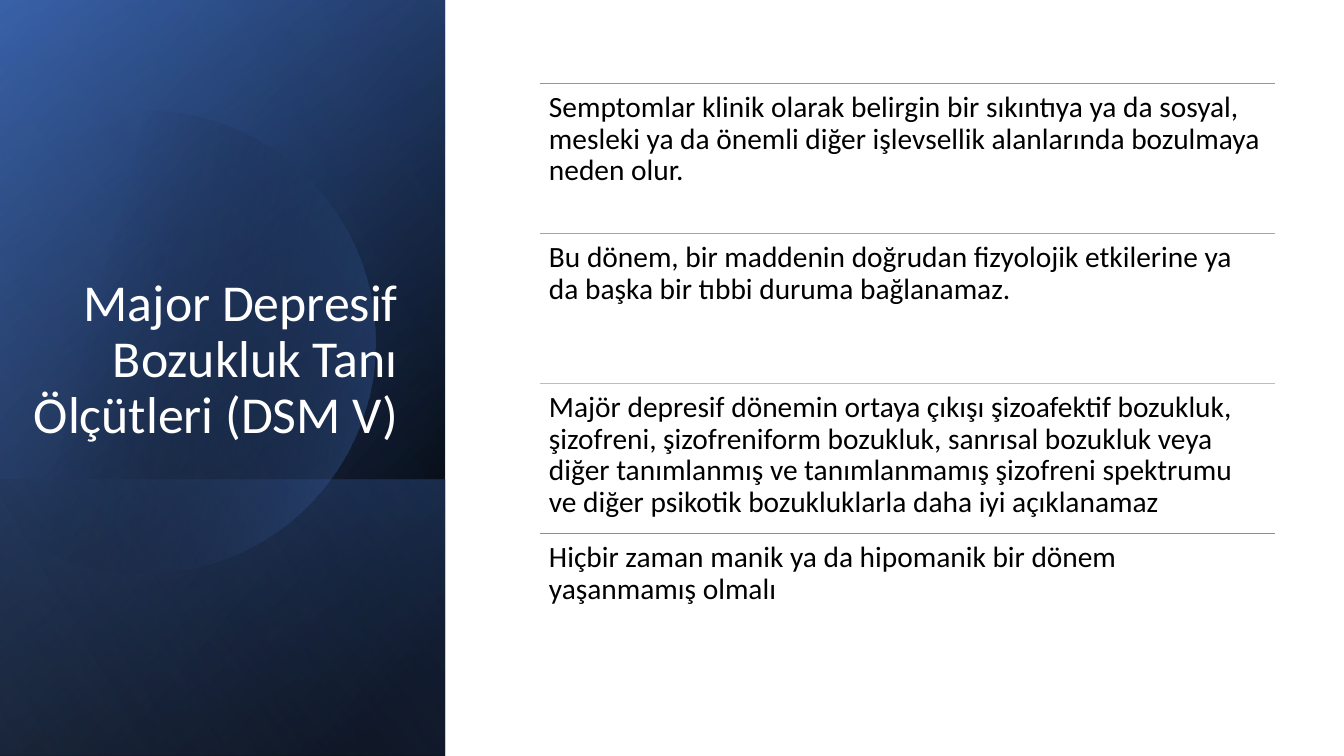
import math

from lxml import etree
from pptx import Presentation
from pptx import util as u
from pptx.dml.color import RGBColor
from pptx.enum import shapes, text
from pptx.oxml.ns import qn

SCALE = 914400 / 100.8


def px(n):
    return u.Emu(round(n * SCALE))


def rgb(code):
    return RGBColor.from_string(code)


class Deck:
    font = "Calibri"

    def __init__(self, wide, high):
        self.prs = Presentation()
        self.prs.slide_width, self.prs.slide_height = px(wide), px(high)
        self.slide = self.prs.slides.add_slide(self.prs.slide_layouts[5])
        self.items = self.slide.shapes

    def shade(self, shape, stops, angle):
        """Fill with two (position, colour, opacity) stops, in percent."""
        shape.shadow.inherit = False
        shape.line.fill.background()
        shape.fill.gradient()
        shape.fill.gradient_angle = 360 - angle
        for stop, (place, color, _) in zip(shape.fill.gradient_stops, stops):
            stop.position = place / 100
            stop.color.rgb = rgb(color)
        marks = shape._element.spPr.iter(qn("a:srgbClr"))
        for mark, (_, _, solid) in zip(list(marks), stops):
            if solid < 100:
                etree.SubElement(mark, qn("a:alpha"), val=str(solid * 1000))

    def panel(self, top, wide, high, stops, angle):
        """Add a mirrored quarter-turned rectangle that shows wide by high."""
        left, drop = (wide - high) / 2, top + (high - wide) / 2
        rect = self.items.add_shape(
            shapes.MSO_SHAPE.RECTANGLE, px(left), px(drop), px(high), px(wide))
        rect.rotation = 90
        rect._element.spPr.find(qn("a:xfrm")).set("flipH", "1")
        self.shade(rect, stops, angle)

    def disc(self, x, y, radius, stops, angle):
        """Add a circle cut off at the left edge of the slide."""
        reach, steps = math.acos(-x / radius), 90
        turns = [reach * (2 * i / steps - 1) for i in range(steps + 1)]
        dots = [(px(x + radius * math.cos(t)), px(y + radius * math.sin(t)))
                for t in turns]
        form = self.items.build_freeform(*dots[0], scale=1.0)
        form.add_line_segments(dots[1:], close=True)
        self.shade(form.convert_to_shape(), stops, angle)

    def label(self, shape, words, size, color, align, anchor):
        """Put styled words into a shape and return its text frame."""
        frame = shape.text_frame
        frame.text = words
        frame.word_wrap = True
        frame.auto_size = text.MSO_AUTO_SIZE.NONE
        frame.vertical_anchor = anchor
        para = frame.paragraphs[0]
        para.alignment = align
        para.line_spacing = 0.9
        font = para.runs[0].font
        font.name, font.size = self.font, u.Pt(size)
        font.color.rgb = rgb(color)
        return frame

    def title(self, words, left, top, wide, high):
        head = self.items.title
        head.left, head.top = px(left), px(top)
        head.width, head.height = px(wide), px(high)
        self.label(head, words, 37, "FFFFFF",
                   text.PP_ALIGN.RIGHT, text.MSO_ANCHOR.BOTTOM)
        self.items._spTree.append(head._element)

    def rule(self, left, top, wide, color):
        line = self.items.add_connector(
            shapes.MSO_CONNECTOR.STRAIGHT,
            px(left), px(top), px(left + wide), px(top))
        line.line.color.rgb = rgb(color)
        line.line.width = u.Pt(0.5)
        etree.SubElement(line._element.spPr, qn("a:effectLst"))

    def body(self, words, left, top, wide, high):
        box = self.items.add_textbox(px(left), px(top), px(wide), px(high))
        frame = self.label(box, words, 21, "000000",
                           text.PP_ALIGN.LEFT, text.MSO_ANCHOR.TOP)
        frame.margin_left = frame.margin_right = px(9)
        frame.margin_top = frame.margin_bottom = px(9)


CRITERIA = [
    ("ED7D31", "Semptomlar klinik olarak belirgin bir sıkıntıya ya da sosyal, "
     "mesleki ya da önemli diğer işlevsellik alanlarında bozulmaya neden olur."),
    ("A5A5A5", "Bu dönem, bir maddenin doğrudan fizyolojik etkilerine ya da "
     "başka bir tıbbi duruma bağlanamaz."),
    ("FFC000", "Majör depresif dönemin ortaya çıkışı şizoafektif bozukluk, "
     "şizofreni, şizofreniform bozukluk, sanrısal bozukluk veya diğer "
     "tanımlanmış ve tanımlanmamış şizofreni spektrumu ve diğer psikotik "
     "bozukluklarla daha iyi açıklanamaz"),
    ("5B9BD5", "Hiçbir zaman manik ya da hipomanik bir dönem yaşanmamış olmalı"),
]


def main():
    deck = Deck(1344, 756)
    side = 445
    deck.panel(0, side, 756, [(8, "000000", 100), (100, "2F5597", 100)], 50)
    deck.panel(0, side, 756, [(0, "000000", 0), (99, "4472C4", 46)], 30)
    deck.panel(480, side, 276, [(2, "4472C4", 29), (100, "000000", 30)], 130)
    deck.disc(144, 342, 231, [(29, "000000", 0), (100, "4472C4", 43)], 14)
    deck.panel(0, side, 756, [(0, "000000", 0), (99, "8FAADC", 11)], 120)
    deck.title("Major Depresif Bozukluk Tanı Ölçütleri (DSM V)",
               20, 174, 388, 276)
    left, top, wide, step = 540, 83, 735, 150
    for i, (color, words) in enumerate(CRITERIA):
        deck.rule(left, top + i * step, wide, color)
        deck.body(words, left, top + i * step, wide, step)
    deck.prs.save("out.pptx")


if __name__ == "__main__":
    main()
